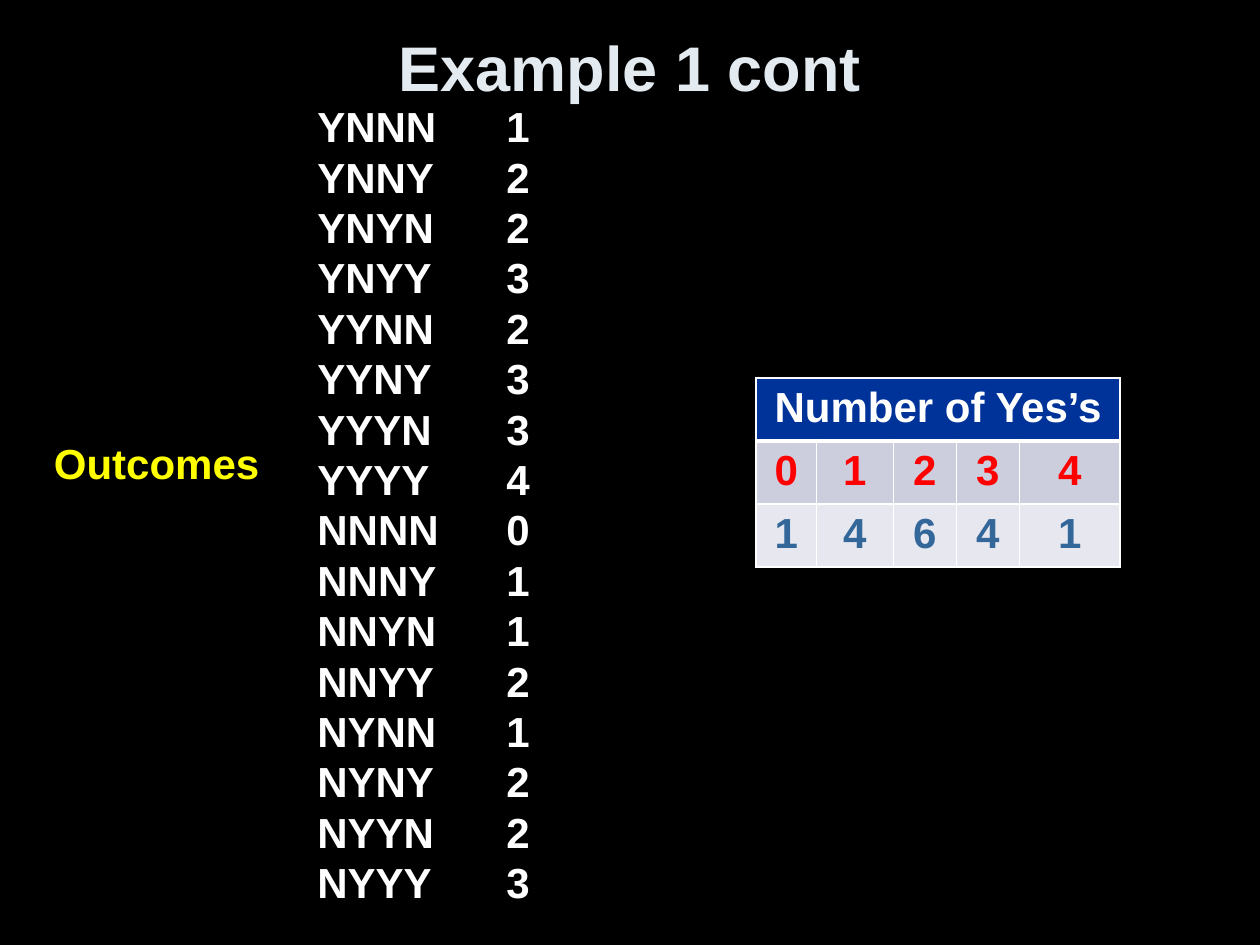
"""Build the slide that counts the Yes answers in each outcome."""
from lxml import etree
from pptx import Presentation
from pptx import util as u
from pptx.dml.color import RGBColor
from pptx.enum import text
from pptx.oxml import ns


def write(frame, lines, size, color, align):
    for i, line in enumerate(lines):
        para = frame.paragraphs[0] if i == 0 else frame.add_paragraph()
        para.alignment = align
        run = para.add_run()
        run.text = line
        run.font.name = "Arial"
        run.font.size = u.Pt(size)
        run.font.bold = True
        run.font.color.rgb = RGBColor.from_string(color)


def edge(cell, side, width):
    props = cell._tc.get_or_add_tcPr()
    line = etree.SubElement(props, ns.qn("a:ln" + side), w=str(u.Pt(width)))
    fill = etree.SubElement(line, ns.qn("a:solidFill"))
    etree.SubElement(fill, ns.qn("a:srgbClr"), val="FFFFFF")


deck = Presentation()
deck.slide_width = u.Inches(10)
deck.slide_height = u.Inches(7.5)
slide = deck.slides.add_slide(deck.slide_layouts[6])
slide.background.fill.solid()
slide.background.fill.fore_color.rgb = RGBColor.from_string("000000")

left, center = text.PP_ALIGN.LEFT, text.PP_ALIGN.CENTER
codes = ["YNNN", "YNNY", "YNYN", "YNYY", "YYNN", "YYNY", "YYYN", "YYYY",
         "NNNN", "NNNY", "NNYN", "NNYY", "NYNN", "NYNY", "NYYN", "NYYY"]
counts = [f"{code}\t\t{code.count('Y')}" for code in codes]
boxes = [
    ((0.5, 0.05, 9, 0.95), ["Example 1 cont"], 36, "E3EBF1", center, True),
    ((2.42, 0.75, 2.41, 6.56), counts, 24, "FFFFFF", left, False),
    ((0.33, 3.42, 1.85, 0.51), ["Outcomes"], 24, "FFFF00", left, False),
]
for place, lines, size, color, align, wrap in boxes:
    frame = slide.shapes.add_textbox(*map(u.Inches, place)).text_frame
    frame.word_wrap = wrap
    frame.vertical_anchor = text.MSO_ANCHOR.MIDDLE if wrap else text.MSO_ANCHOR.TOP
    write(frame, lines, size, color, align)

rows = [
    (["Number of Yes’s", "", "", "", ""], "FFFFFF", "003399"),
    (["0", "1", "2", "3", "4"], "FF0000", "CCCEDE"),
    (["1", "4", "6", "4", "1"], "336699", "E7E8EF"),
]
widths = [0.48, 0.61, 0.5, 0.5, 0.8]
table = slide.shapes.add_table(
    len(rows), len(widths), u.Inches(6), u.Inches(3),
    u.Inches(sum(widths)), u.Inches(1.5)).table
for col, width in zip(table.columns, widths):
    col.width = u.Inches(width)
table.cell(0, 0).merge(table.cell(0, 4))
for r, (words, color, back) in enumerate(rows):
    for c, word in enumerate(words):
        cell = table.cell(r, c)
        for side in "LRTB":
            thick = (r, side) in [(0, "B"), (1, "T")]
            edge(cell, side, 3 if thick else 1)
        cell.fill.solid()
        cell.fill.fore_color.rgb = RGBColor.from_string(back)
        if word:
            write(cell.text_frame, [word], 24, color, center)

deck.save("out.pptx")
